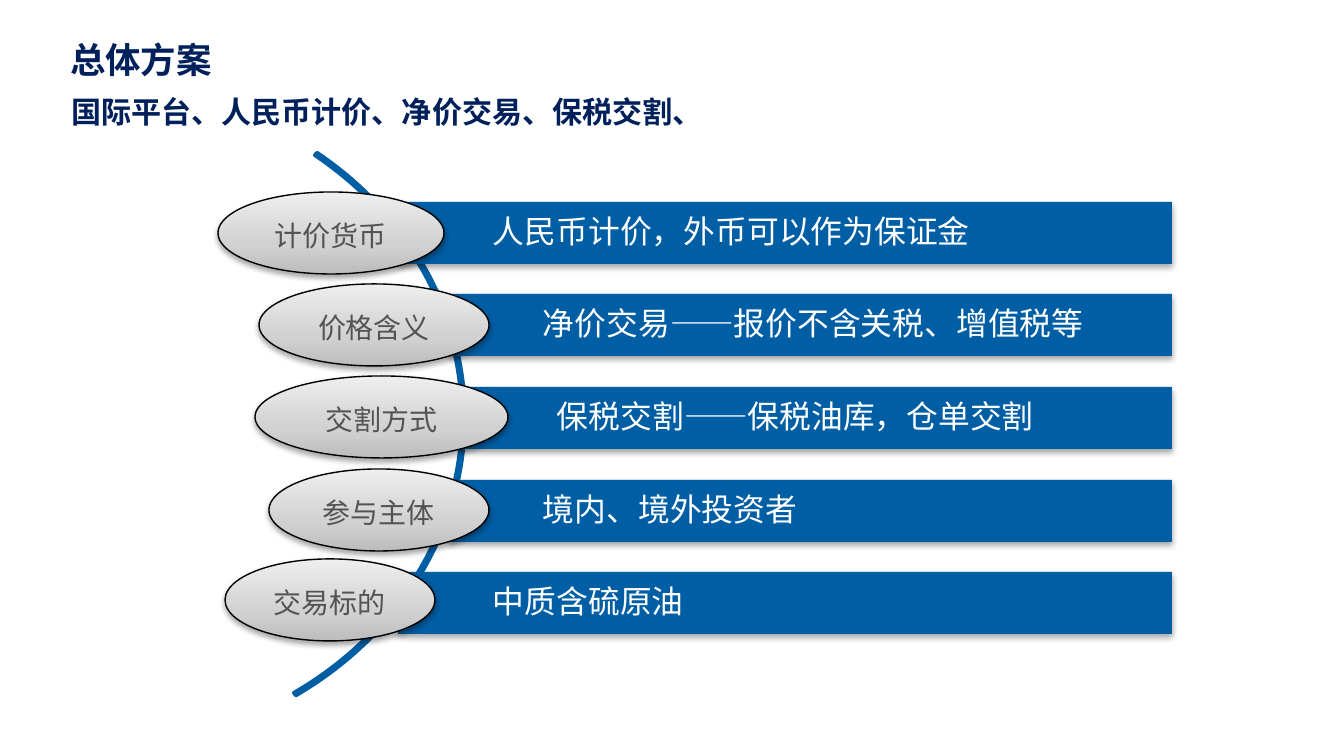
"""Build the overall plan slide: an arc with five labelled ovals and bars."""
from copy import deepcopy

from lxml import etree
from pptx import Presentation
from pptx.dml.color import RGBColor
from pptx.enum.shapes import MSO_SHAPE
from pptx.enum.text import MSO_ANCHOR, PP_ALIGN
from pptx.oxml.ns import qn
from pptx.util import Emu, Pt

ARC, BAR, OVAL = MSO_SHAPE.BLOCK_ARC, MSO_SHAPE.RECTANGLE, MSO_SHAPE.OVAL
MIDDLE, TOP = MSO_ANCHOR.MIDDLE, MSO_ANCHOR.TOP
LEFT, CENTER = PP_ALIGN.LEFT, PP_ALIGN.CENTER
SCALE = 914400 / 134.4
NAVY, BLUE, WHITE, GREY, BLACK = "00205B", "005EA4", "FFFFFF", "535353", "000000"
CJK = "Noto Sans CJK SC"


def write(shape, text, size, color, font, insets, anchor=MIDDLE, align=LEFT, bold=False):
    """Fill a shape with one formatted paragraph and return the paragraph."""
    frame = shape.text_frame
    frame.text = text
    frame.word_wrap = True
    frame.vertical_anchor = anchor
    frame.margin_left, frame.margin_top, frame.margin_right, frame.margin_bottom = [
        Emu(round(inset * SCALE)) for inset in insets
    ]
    para = frame.paragraphs[0]
    para.alignment = align
    span = para.runs[0]
    span.font.size = Pt(size)
    span.font.name = font
    span.font.bold = bold
    span.font.color.rgb = RGBColor.from_string(color)
    etree.SubElement(span.font._element, qn("a:ea"), typeface=CJK)
    return para


def add_shadow(shape):
    """Give a shape a soft shadow straight below it."""
    shape.shadow.inherit = False
    effects = shape._element.spPr.find(qn("a:effectLst"))
    shadow = etree.SubElement(effects, qn("a:outerShdw"), blurRad="38100", dist="22860",
                              dir="5400000", rotWithShape="0")
    color = etree.SubElement(shadow, qn("a:srgbClr"), val=BLACK)
    etree.SubElement(color, qn("a:alpha"), val="35000")


deck = Presentation()
deck.slide_width, deck.slide_height = Emu(round(1344 * SCALE)), Emu(round(756 * SCALE))
page = deck.slides.add_slide(deck.slide_layouts[6])

headings = [
    ("总体方案", 63, 31, 1085, 63, 19, 4, 1.0),
    ("国际平台、人民币计价、净价交易、保税交割、", 65, 94, 1124, 44, 16.1, 3, 0.8),
]
for text, left, top, width, height, size, before, spacing in headings:
    box = page.shapes.add_textbox(*[Emu(round(n * SCALE)) for n in (left, top, width, height)])
    para = write(box, text, size, NAVY, "Cabin", (7, 7, 7, 7), TOP, bold=True)
    para.space_before = Pt(before)
    para.line_spacing = spacing

arc = page.shapes.add_shape(ARC, *[Emu(round(n * SCALE)) for n in (-284, 85, 749, 665)])
for index, value in enumerate((186.33, 32.13, 0.005)):
    arc.adjustments[index] = value
arc.shadow.inherit = False
arc.fill.solid()
arc.fill.fore_color.rgb = RGBColor.from_string(BLUE)
arc.line.color.rgb = RGBColor.from_string(BLUE)
arc.line.width = Pt(2)

rows = [
    ("计价货币", "人民币计价，外币可以作为保证金", 398, 202, 218, 192, 226),
    ("价格含义", "净价交易——报价不含关税、增值税等", 448, 294, 259, 284, 230),
    ("交割方式", "保税交割——保税油库，仓单交割", 462, 387, 255, 376, 253),
    ("参与主体", "境内、境外投资者", 448, 480, 269, 469, 220),
    ("交易标的", "中质含硫原油", 398, 572, 225, 559, 210),
]
for label, detail, bar_left, bar_top, oval_left, oval_top, oval_width in rows:
    bar_place = (bar_left, bar_top, 1172 - bar_left, 62)
    bar = page.shapes.add_shape(BAR, *[Emu(round(n * SCALE)) for n in bar_place])
    bar.fill.solid()
    bar.fill.fore_color.rgb = RGBColor.from_string(BLUE)
    bar.line.fill.background()
    add_shadow(bar)
    para = write(bar, detail, 17, WHITE, CJK, (69, 11, 11, 11))
    para.line_spacing = 0.9
    para._p.get_or_add_pPr().set("indent", str(round(26 * SCALE)))

    oval_place = (oval_left, oval_top, oval_width, 82)
    oval = page.shapes.add_shape(OVAL, *[Emu(round(n * SCALE)) for n in oval_place])
    oval.fill.gradient()
    oval.fill.gradient_angle = 90
    first_stop = oval._element.spPr.find(".//" + qn("a:gs"))
    first_stop.addnext(deepcopy(first_stop))
    shades = [(0, "BDBDBD"), (0.35, "D1D1D1"), (1, "EEEEEE")]
    for stop, (position, shade) in zip(oval.fill.gradient_stops, shades):
        stop.position = position
        stop.color.rgb = RGBColor.from_string(shade)
    oval.line.color.rgb = RGBColor.from_string(BLACK)
    oval.line.width = Pt(0.75)
    add_shadow(oval)
    write(oval, label, 15, GREY, CJK, (13, 11, 13, 7), align=CENTER)

deck.save("out.pptx")
